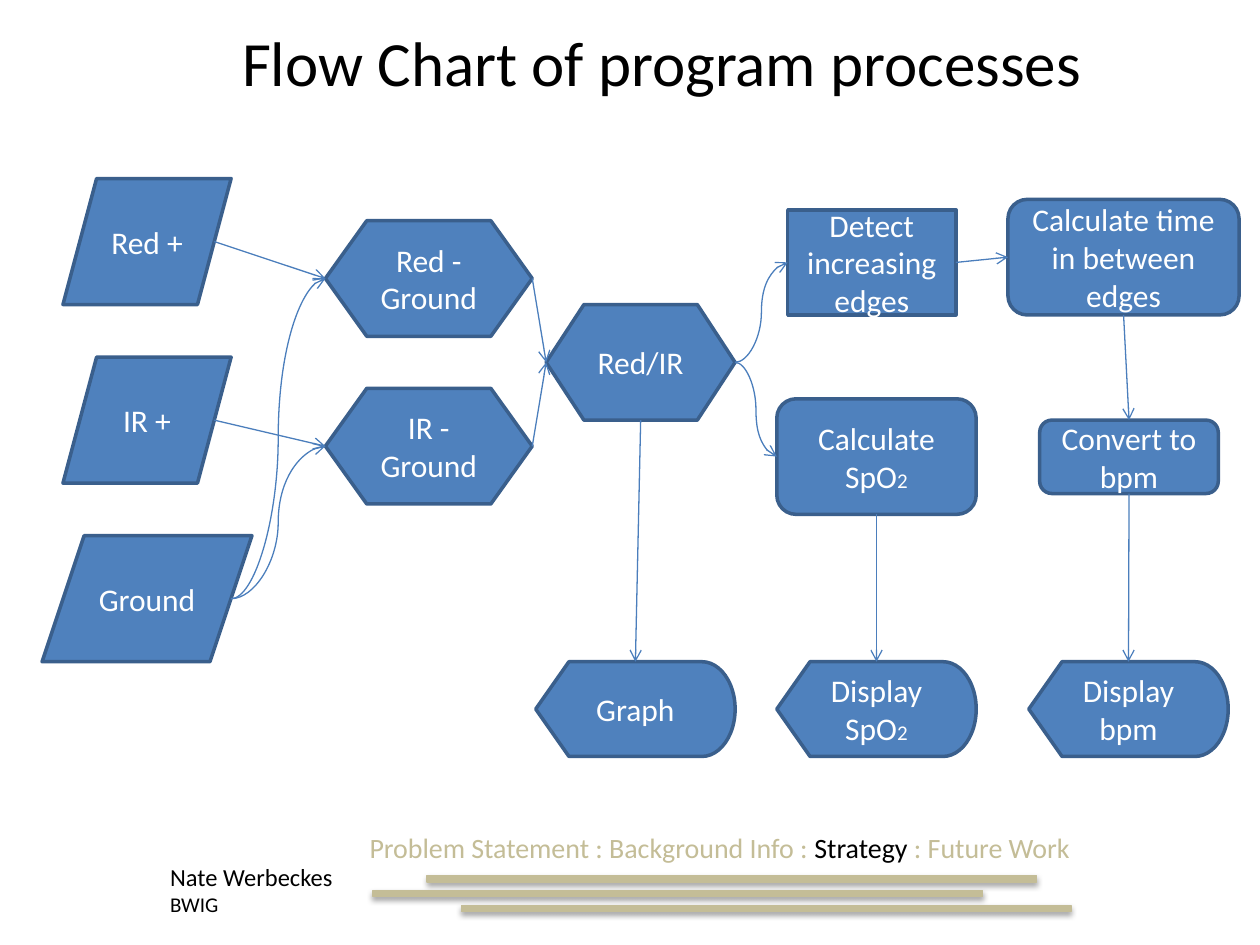
from lxml import etree
from pptx import Presentation
from pptx import util as u
from pptx.dml.color import RGBColor
from pptx.enum import shapes, text
from pptx.oxml import ns

Kind = shapes.MSO_SHAPE
Route = shapes.MSO_CONNECTOR
Anchor = text.MSO_ANCHOR
Align = text.PP_ALIGN
TOP, LEFT, BOTTOM, RIGHT = range(4)

BLUE, EDGE, ARROW = "4F81BD", "3A5F8C", "4B7EBC"
TAN, BLACK, WHITE = "C4BD97", "000000", "FFFFFF"

INPUT = Kind.FLOWCHART_DATA
MATH = Kind.FLOWCHART_PREPARATION
PROCESS = Kind.FLOWCHART_PROCESS
ROUNDED = Kind.FLOWCHART_ALTERNATE_PROCESS
DISPLAY = Kind.FLOWCHART_DISPLAY

STEPS = {
    "red": (INPUT, (1.27, 3.6, 3.39, 2.54), [("Red +", 18)]),
    "ir": (INPUT, (1.27, 7.2, 3.39, 2.54), [("IR +", 18)]),
    "ground": (INPUT, (0.85, 10.8, 4.23, 2.54), [("Ground", 18)]),
    "red_diff": (MATH, (6.56, 4.45, 4.17, 2.33), [("Red - Ground", 18)]),
    "ir_diff": (MATH, (6.56, 7.83, 4.17, 2.33), [("IR - Ground", 18)]),
    "ratio": (MATH, (11.01, 6.14, 3.81, 2.33), [("Red/IR", 18)]),
    "graph": (DISPLAY, (10.8, 13.34, 4.02, 1.91), [("Graph", 18)]),
    "detect": (PROCESS, (15.88, 4.23, 3.39, 2.12), [("Detect increasing edges", 18)]),
    "spo2": (ROUNDED, (15.66, 8.04, 4.02, 2.33), [("Calculate SpO", 18), ("2", 12)]),
    "time": (ROUNDED, (20.32, 4.02, 4.66, 2.33), [("Calculate time in between edges", 18)]),
    "bpm": (ROUNDED, (20.96, 8.47, 3.6, 1.48), [("Convert to bpm", 18)]),
    "show_spo2": (DISPLAY, (15.66, 13.34, 4.02, 1.91), [("Display SpO", 18), ("2", 12)]),
    "show_bpm": (DISPLAY, (20.74, 13.34, 4.02, 1.91), [("Display bpm", 18)]),
}

FLOWS = [
    ("red", RIGHT, "red_diff", LEFT, Route.STRAIGHT),
    ("ir", RIGHT, "ir_diff", LEFT, Route.STRAIGHT),
    ("ground", RIGHT, "red_diff", LEFT, Route.CURVE),
    ("ground", RIGHT, "ir_diff", LEFT, Route.CURVE),
    ("red_diff", RIGHT, "ratio", LEFT, Route.STRAIGHT),
    ("ir_diff", RIGHT, "ratio", LEFT, Route.STRAIGHT),
    ("ratio", RIGHT, "spo2", LEFT, Route.CURVE),
    ("ratio", RIGHT, "detect", LEFT, Route.CURVE),
    ("detect", RIGHT, "time", LEFT, Route.STRAIGHT),
    ("spo2", BOTTOM, "show_spo2", TOP, Route.STRAIGHT),
    ("ratio", BOTTOM, "graph", TOP, Route.STRAIGHT),
    ("time", BOTTOM, "bpm", TOP, Route.STRAIGHT),
    ("bpm", BOTTOM, "show_bpm", TOP, Route.STRAIGHT),
]

BAR_LEFTS = [8.61, 7.52, 9.3]
BAR_TOP, BAR_STEP, BAR_WIDTH, BAR_HEIGHT = 17.65, 0.3, 12.29, 0.13

TITLE_FORMAT = {"vertical_anchor": Anchor.TOP, "margin_top": u.Cm(0.05)}
STEP_FORMAT = {"vertical_anchor": Anchor.MIDDLE}
LABEL_FORMAT = {"auto_size": text.MSO_AUTO_SIZE.SHAPE_TO_FIT_TEXT}
LABELS = [
    ((1.91, 0.43, 22.86, 3.18), TITLE_FORMAT, Align.CENTER,
     [[("Flow Chart of program processes", 36, BLACK)]]),
    ((7.2, 16.61, 14.82, 0.94), LABEL_FORMAT, Align.LEFT,
     [[("Problem Statement : Background Info : ", 16, TAN),
       ("Strategy ", 16, BLACK), (": Future Work", 16, TAN)]]),
    ((3.18, 17.25, 4.45, 1.37), LABEL_FORMAT, Align.LEFT,
     [[("Nate Werbeckes", 14, BLACK)], [("BWIG", 12, BLACK)]]),
]


def rgb(color):
    return RGBColor.from_string(color)


def place(box):
    return [u.Cm(value) for value in box]


def add_xml(parent, tag, **attributes):
    return etree.SubElement(parent, ns.qn(tag), attributes)


def write(frame, paragraphs, align, formats):
    for name, value in {"word_wrap": True, **formats}.items():
        setattr(frame, name, value)
    for index, parts in enumerate(paragraphs):
        paragraph = frame.add_paragraph() if index else frame.paragraphs[0]
        paragraph.alignment = align
        for words, size, color in parts:
            run = paragraph.add_run()
            run.text = words
            for name, value in {"name": "Calibri", "size": u.Pt(size)}.items():
                setattr(run.font, name, value)
            run.font.color.rgb = rgb(color)


def add_block(slide, kind, box, fill, edge, width):
    block = slide.shapes.add_shape(kind, *place(box))
    block.shadow.inherit = False
    block.fill.solid()
    block.fill.fore_color.rgb = rgb(fill)
    block.line.color.rgb = rgb(edge)
    block.line.width = u.Pt(width)
    return block


def add_bars(slide):
    for index, left in enumerate(BAR_LEFTS):
        box = (left, BAR_TOP + index * BAR_STEP, BAR_WIDTH, BAR_HEIGHT)
        bar = add_block(slide, Kind.RECTANGLE, box, TAN, TAN, 0.75)
        effects = bar._element.spPr.find(ns.qn("a:effectLst"))
        shadow = add_xml(effects, "a:outerShdw", blurRad=str(u.Pt(3.1)),
                         dist=str(u.Pt(1.8)), dir="5400000", rotWithShape="0")
        shade = add_xml(shadow, "a:srgbClr", val=BLACK)
        add_xml(shade, "a:alpha", val="35000")


def add_flow(slide, blocks, source, out_side, target, in_side, route):
    start, end = blocks[source], blocks[target]
    slanted = STEPS[source][0] == INPUT
    x = start.left + int(start.width * 0.9)
    y = start.top + start.height // 2
    flow = slide.shapes.add_connector(route, x, y, end.left, end.top)
    if not slanted:
        flow.begin_connect(start, out_side)
    flow.end_connect(end, in_side)
    flow.line.color.rgb = rgb(ARROW)
    flow.line.width = u.Pt(0.75)
    add_xml(flow.line._get_or_add_ln(), "a:tailEnd", type="arrow")
    add_xml(flow._element.spPr, "a:effectLst")


def main():
    deck = Presentation()
    deck.slide_width, deck.slide_height = u.Cm(25.4), u.Cm(19.05)
    slide = deck.slides.add_slide(deck.slide_layouts[6])
    add_bars(slide)
    blocks = {}
    for key, (kind, box, parts) in STEPS.items():
        blocks[key] = add_block(slide, kind, box, BLUE, EDGE, 2)
        words = [(part, size, WHITE) for part, size in parts]
        write(blocks[key].text_frame, [words], Align.CENTER, STEP_FORMAT)
    for flow in FLOWS:
        add_flow(slide, blocks, *flow)
    for box, formats, align, paragraphs in LABELS:
        label = slide.shapes.add_textbox(*place(box))
        write(label.text_frame, paragraphs, align, formats)
    deck.save("out.pptx")


if __name__ == "__main__":
    main()
